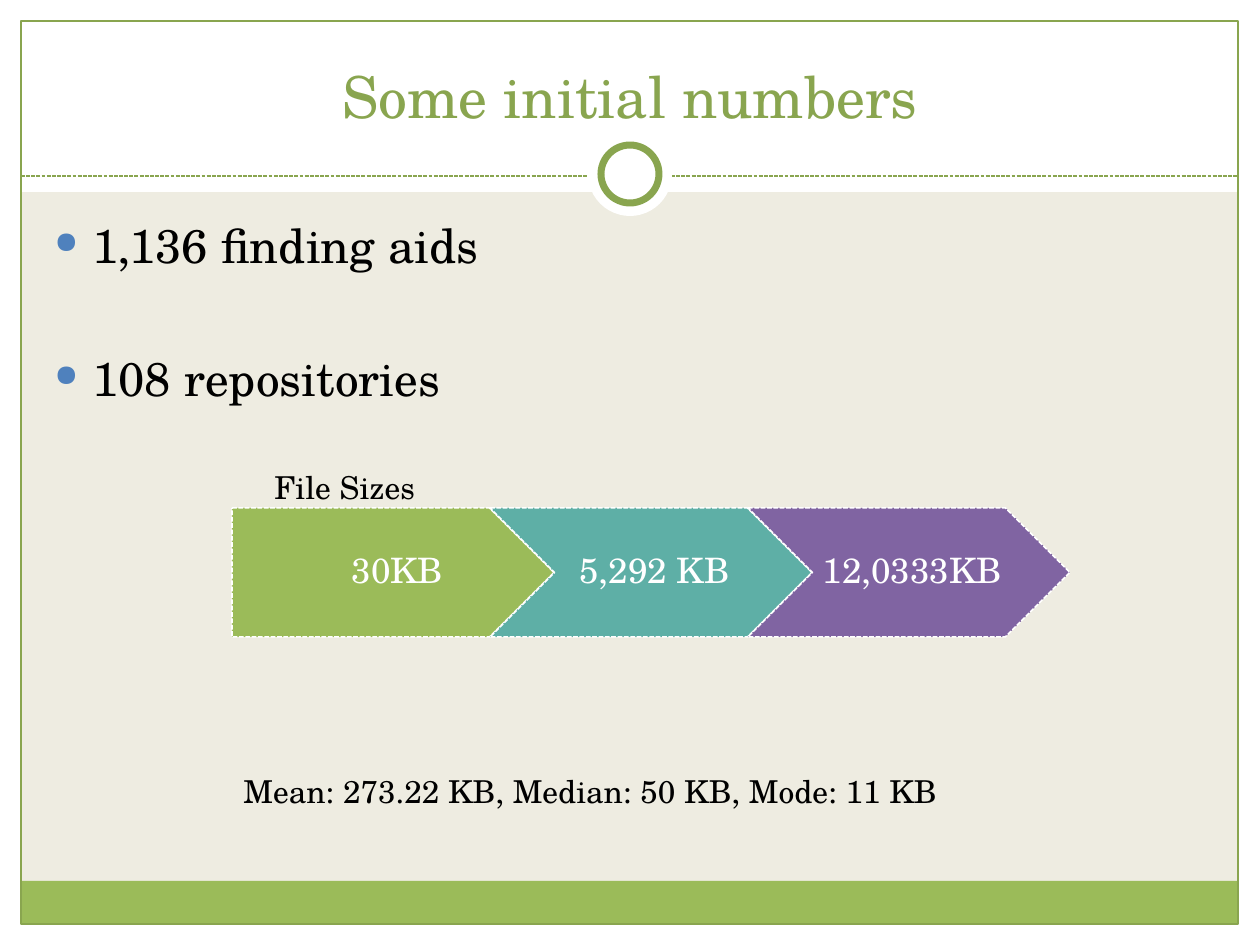
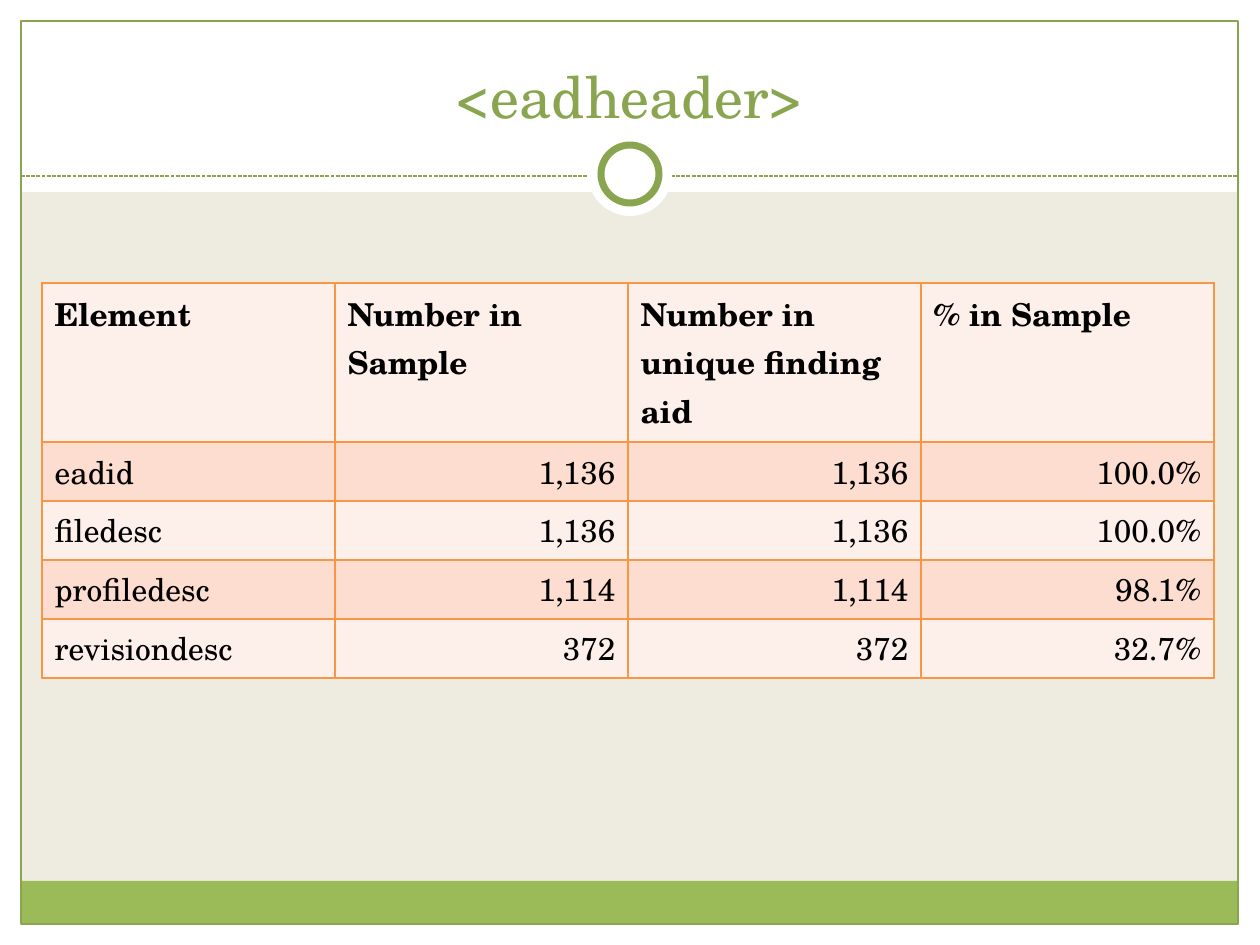
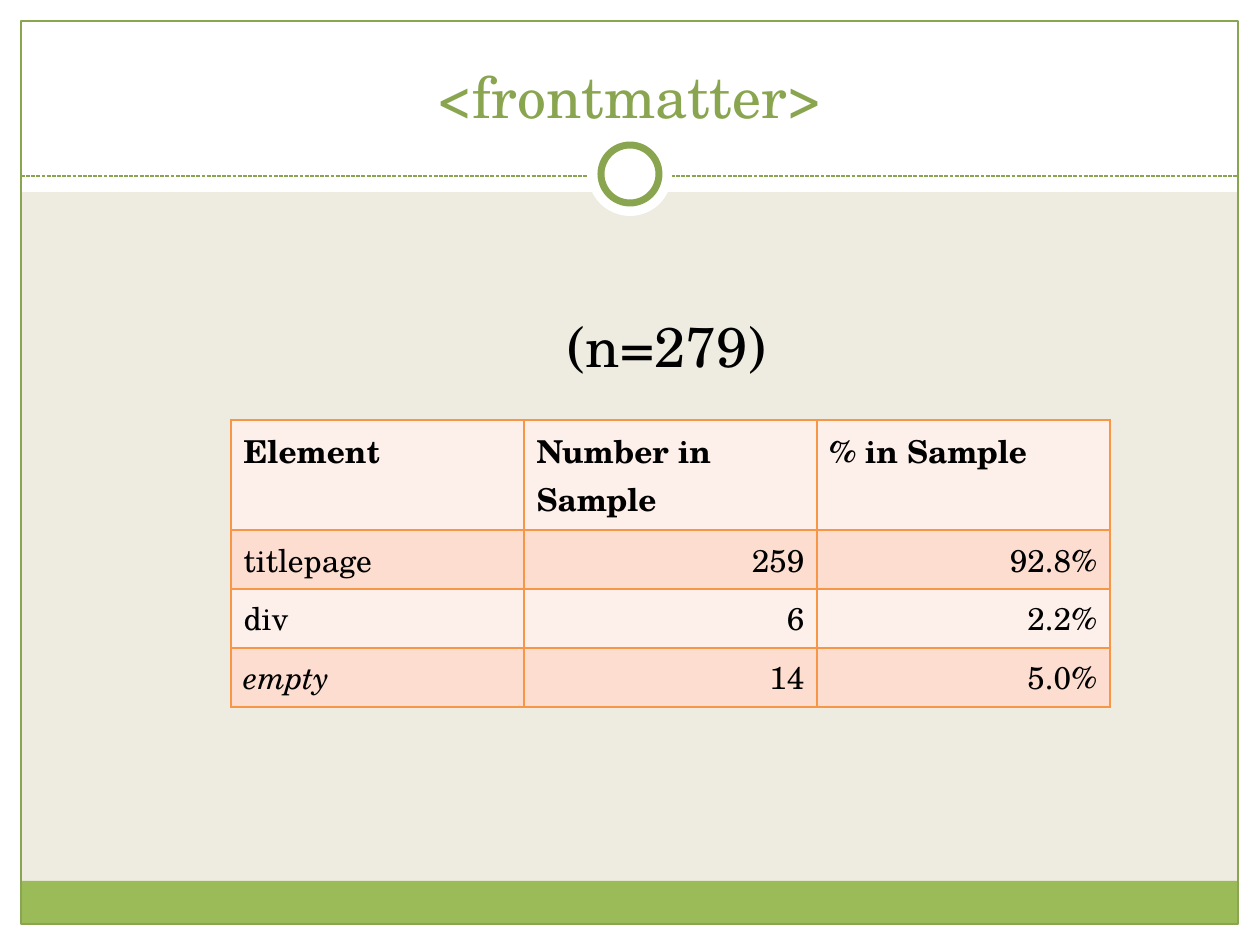
from lxml import etree
from pptx import Presentation
from pptx.dml.color import RGBColor
from pptx.enum.dml import MSO_LINE
from pptx.enum.shapes import MSO_CONNECTOR, MSO_SHAPE as Kind
from pptx.enum.text import MSO_ANCHOR as Anchor, PP_ALIGN as Align
from pptx.oxml import parse_xml
from pptx.oxml.ns import nsdecls, qn
from pptx.util import Pt

PX = 7257  # EMU in one px, at 126 px to the inch
FONT = "TeX Gyre Schola"
WHITE = RGBColor(0xFF, 0xFF, 0xFF)
BLACK = RGBColor(0x00, 0x00, 0x00)
CREAM = RGBColor(0xEE, 0xEC, 0xE1)
GREEN = RGBColor(0x9B, 0xBB, 0x59)
OLIVE = RGBColor(0x89, 0xA5, 0x4F)
TEAL = RGBColor(0x5E, 0xAF, 0xA6)
PURPLE = RGBColor(0x80, 0x64, 0xA2)
BLUE = RGBColor(0x4F, 0x81, 0xBD)
ORANGE = RGBColor(0xF7, 0x96, 0x46)
PALE = RGBColor(0xFD, 0xEF, 0xE9)
PEACH = RGBColor(0xFC, 0xDD, 0xCF)


def draw(slide, kind, box, fill=None, line=None, width=0.75):
    """Add a preset shape, or a wrapping text box if kind is None."""
    box = [n * PX for n in box]
    if kind is None:
        shape = slide.shapes.add_textbox(*box)
        shape.text_frame.word_wrap = True
        return shape
    shape = slide.shapes.add_shape(kind, *box)
    shape.shadow.inherit = False
    if fill is None:
        shape.fill.background()
    else:
        shape.fill.solid()
        shape.fill.fore_color.rgb = fill
    if line is None:
        shape.line.fill.background()
    else:
        shape.line.color.rgb = line
        shape.line.width = Pt(width)
    return shape


def write(para, text, size, color=BLACK, align=Align.LEFT):
    para.text = text
    para.alignment = align
    font = para.font
    font.name, font.size, font.color.rgb = FONT, Pt(size), color
    return para


deck = Presentation()
deck.slide_width, deck.slide_height = 1260 * PX, 945 * PX
blank = deck.slide_layouts[6]

# Shared frame and title
bands = [
    ((0, 924, 1260, 21), WHITE),
    ((0, 0, 1260, 192), WHITE),
    ((0, 0, 21, 945), WHITE),
    ((1239, 0, 21, 945), WHITE),
    ((21, 881, 1217, 43), GREEN),
]
slides = []
for title in ["Some initial numbers", "<eadheader>", "<frontmatter>"]:
    slide = deck.slides.add_slide(blank)
    slide.background.fill.solid()
    slide.background.fill.fore_color.rgb = CREAM
    for box, fill in bands:
        draw(slide, Kind.RECTANGLE, box, fill)
    draw(slide, Kind.RECTANGLE, (21, 21, 1217, 903), line=OLIVE)
    rule = slide.shapes.add_connector(
        MSO_CONNECTOR.STRAIGHT, 21 * PX, 176 * PX, 1239 * PX, 176 * PX)
    rule.line.color.rgb = OLIVE
    rule.line.width = Pt(0.75)
    rule.line.dash_style = MSO_LINE.SQUARE_DOT
    etree.SubElement(rule._element.spPr, qn("a:effectLst"))
    draw(slide, Kind.OVAL, (588, 132, 84, 84), WHITE)
    draw(slide, Kind.OVAL, (601, 145, 58, 58), WHITE, OLIVE, 4)
    frame = draw(slide, None, (42, 31, 1176, 105)).text_frame
    frame.vertical_anchor = Anchor.BOTTOM
    write(frame.paragraphs[0], title, 33, OLIVE, Align.CENTER)
    slides.append(slide)
first, header, front = slides

# Bullets
frame = draw(first, None, (42, 210, 1172, 630)).text_frame
for text, gap in [("1,136 finding aids", 5.4), ("108 repositories", 43.5)]:
    para = frame.paragraphs[0] if not frame.text else frame.add_paragraph()
    write(para, text, 27).space_before = Pt(gap)
    props = para._p.get_or_add_pPr()
    props.set("marL", str(38 * PX))
    props.set("indent", str(-38 * PX))
    marks = [
        f'<a:buClr {nsdecls("a")}><a:srgbClr val="{BLUE}"/></a:buClr>',
        f'<a:buSzPct {nsdecls("a")} val="64000"/>',
        f'<a:buChar {nsdecls("a")} char="●"/>',
    ]
    spot = props.index(props.find(qn("a:defRPr")))
    for step, mark in enumerate(marks):
        props.insert(spot + step, parse_xml(mark))

# File size arrows
arrows = [
    ("30KB", Kind.PENTAGON, GREEN, 45),
    ("5,292 KB", Kind.CHEVRON, TEAL, 11),
    ("12,0333KB", Kind.CHEVRON, PURPLE, 11),
]
for col, (text, kind, fill, inset) in enumerate(arrows):
    arrow = draw(first, kind, (232 + 258 * col, 508, 322, 129), fill, WHITE, 0.9)
    arrow.line.dash_style = MSO_LINE.SQUARE_DOT
    frame = arrow.text_frame
    frame.word_wrap = False
    frame.vertical_anchor = Anchor.MIDDLE
    frame.margin_left, frame.margin_right = inset * PX, 4 * PX
    write(frame.paragraphs[0], text, 20, WHITE, Align.CENTER).line_spacing = 0.9

notes = [
    (first, "File Sizes", (262, 462, 410, 50), 18, Align.LEFT),
    (first, "Mean: 273.22 KB, Median: 50 KB, Mode: 11 KB",
     (231, 766, 872, 50), 18, Align.LEFT),
    (front, "(n=279)", (546, 305, 242, 80), 32, Align.CENTER),
]
for slide, text, box, size, align in notes:
    frame = draw(slide, None, box).text_frame
    write(frame.paragraphs[0], text, size, align=align)

# Tables
COL, ROW = 293, 59
tables = [
    (header, 42, 283, 159, [
        ("Element", "Number in Sample", "Number in unique finding aid", "% in Sample"),
        ("eadid", "1,136", "1,136", "100.0%"),
        ("filedesc", "1,136", "1,136", "100.0%"),
        ("profiledesc", "1,114", "1,114", "98.1%"),
        ("revisiondesc", "372", "372", "32.7%"),
    ]),
    (front, 231, 420, 110, [
        ("Element", "Number in Sample", "% in Sample"),
        ("titlepage", "259", "92.8%"),
        ("div", "6", "2.2%"),
        ("empty", "14", "5.0%"),
    ]),
]
for slide, left, top, head, rows in tables:
    wide, tall = len(rows[0]), len(rows)
    grid = slide.shapes.add_table(
        tall, wide, left * PX, top * PX,
        wide * COL * PX, (head + ROW * (tall - 1)) * PX).table
    for r, row in enumerate(rows):
        grid.rows[r].height = (ROW if r else head) * PX
        for c, text in enumerate(row):
            cell = grid.cell(r, c)
            cell.fill.solid()
            cell.fill.fore_color.rgb = PEACH if r % 2 else PALE
            align = Align.RIGHT if r and c else Align.LEFT
            para = write(cell.text_frame.paragraphs[0], text, 18, align=align)
            para.font.bold = r == 0
            para.font.italic = text == "empty"
            props = cell._tc.get_or_add_tcPr()
            for spot, side in enumerate(["lnL", "lnR", "lnT", "lnB"]):
                props.insert(spot, parse_xml(
                    f'<a:{side} {nsdecls("a")} w="12700"><a:solidFill>'
                    f'<a:srgbClr val="{ORANGE}"/></a:solidFill></a:{side}>'))

deck.save("out.pptx")
